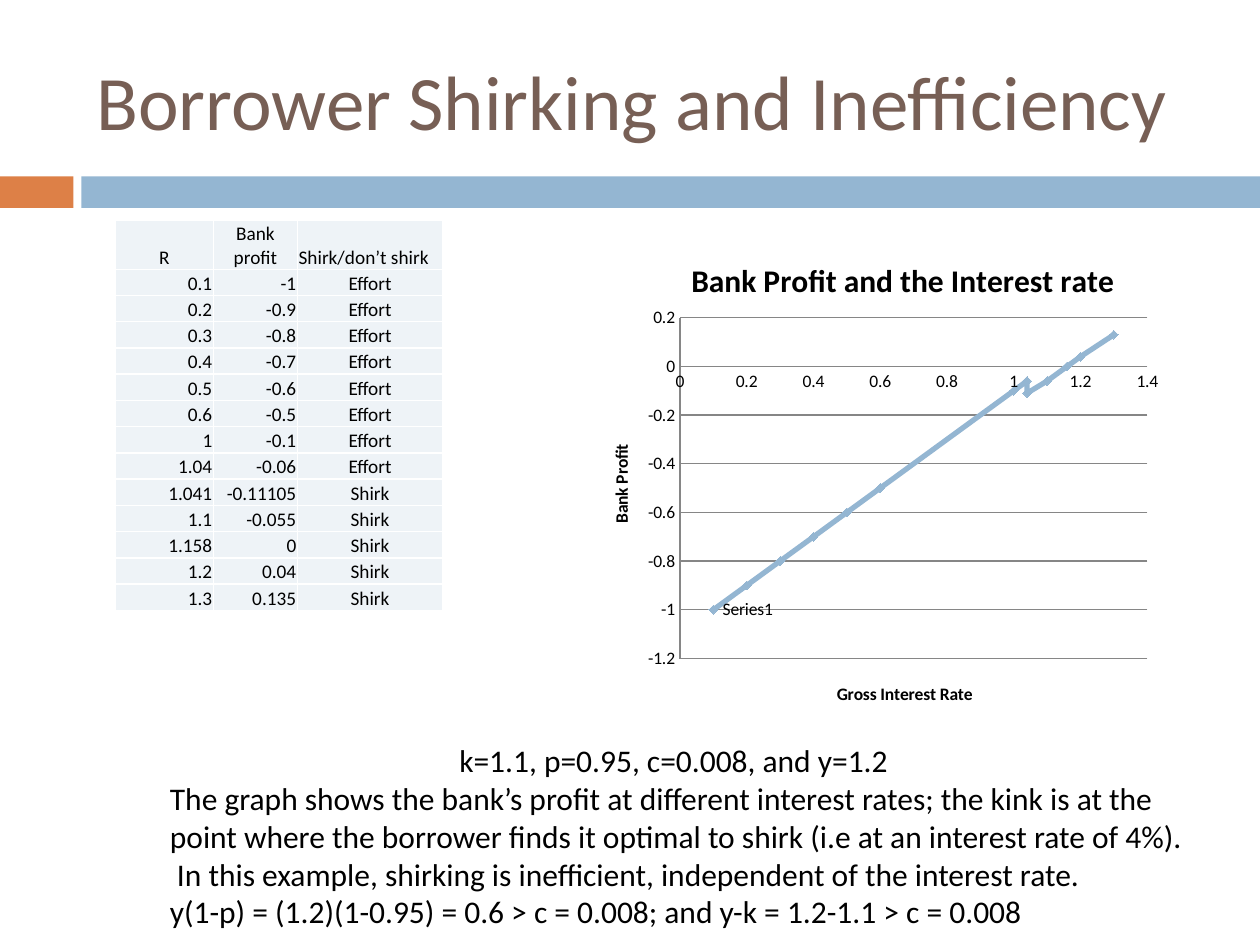
from lxml import etree
from pptx import Presentation
from pptx.chart.data import XyChartData
from pptx.dml.color import RGBColor
from pptx.enum import chart as ch, shapes, text
from pptx.oxml import parse_xml
from pptx.oxml.ns import nsdecls, qn
from pptx.util import Pt

BLACK = RGBColor(0x00, 0x00, 0x00)
WHITE = RGBColor(0xFF, 0xFF, 0xFF)
BROWN = RGBColor(0x77, 0x5F, 0x55)
ORANGE = RGBColor(0xDD, 0x80, 0x47)
BLUE = RGBColor(0x94, 0xB6, 0xD2)
PALE = RGBColor(0xEE, 0xF3, 0xF7)
GRAY = RGBColor(0x86, 0x86, 0x86)
LEFT, CENTER, RIGHT = (text.PP_ALIGN.LEFT, text.PP_ALIGN.CENTER,
                       text.PP_ALIGN.RIGHT)

HEADERS = ("R", "Bank profit", "Shirk/don’t shirk")
RATES = (0.1, 0.2, 0.3, 0.4, 0.5, 0.6, 1, 1.04, 1.041, 1.1, 1.158, 1.2, 1.3)
PROFITS = (-1, -0.9, -0.8, -0.7, -0.6, -0.5, -0.1, -0.06, -0.11105, -0.055,
           0, 0.04, 0.135)
PLOT_PROFITS = PROFITS[:8] + (-0.11, -0.06, 0, 0.04, 0.13)
SHIRK_RATE = 1.04
NOTES = (
    ("k=1.1, p=0.95, c=0.008, and y=1.2 ", CENTER),
    ("The graph shows the bank’s profit at different interest rates; the kink "
     "is at the point where the borrower finds it optimal to shirk (i.e at an "
     "interest rate of 4%).  In this example, shirking is inefficient, "
     "independent of the interest rate.", LEFT),
    ("y(1-p) = (1.2)(1-0.95) = 0.6 > c = 0.008; and y-k = 1.2-1.1 > c = 0.008",
     LEFT),
)


def set_attrs(obj, **values):
    for name, value in values.items():
        setattr(obj, name, value)


def set_font(font, size, color=BLACK, bold=False):
    set_attrs(font, name="Calibri", size=Pt(size), bold=bold)
    font.color.rgb = color


def place(sp, box):
    set_attrs(sp, **dict(zip(("left", "top", "width", "height"),
                             map(Pt, box))))


def write(p, value, size, align=LEFT, color=BLACK, bold=False):
    p.alignment = align
    r = p.add_run()
    r.text = value
    set_font(r.font, size, color, bold)


def add_title(s, box):
    sp = s.shapes.title
    place(sp, box)
    tf = sp.text_frame
    set_attrs(tf, vertical_anchor=text.MSO_ANCHOR.MIDDLE, word_wrap=True,
              auto_size=text.MSO_AUTO_SIZE.NONE)
    write(tf.paragraphs[0], "Borrower Shirking and Inefficiency", 44,
          color=BROWN)


def add_band(s, box):
    x, y, w, h = box
    tab, gap = 42, 4.5
    for left, width, color in ((x, tab, ORANGE),
                               (x + tab + gap, w - tab - gap, BLUE)):
        sp = s.shapes.add_shape(shapes.MSO_SHAPE.RECTANGLE,
                                *map(Pt, (left, y, width, h)))
        sp.shadow.inherit = False
        sp.fill.solid()
        sp.fill.fore_color.rgb = color
        sp.line.fill.background()


def border_cell(cell):
    tc_pr = cell._tc.get_or_add_tcPr()
    for i, side in enumerate(("lnL", "lnR", "lnT", "lnB")):
        tc_pr.insert(i, parse_xml(
            f'<a:{side} {nsdecls("a")} w="{Pt(1)}"><a:solidFill>'
            f'<a:srgbClr val="{WHITE}"/></a:solidFill></a:{side}>'))


def add_profit_table(s, box):
    rows = [HEADERS] + [
        (f"{rate:g}", f"{profit:g}",
         "Effort" if rate <= SHIRK_RATE else "Shirk")
        for rate, profit in zip(RATES, PROFITS)]
    head_h = 27.5
    row_h = (box[3] - head_h) / len(RATES)
    tbl = s.shapes.add_table(len(rows), len(HEADERS), *map(Pt, box)).table
    set_attrs(tbl, first_row=False, horz_banding=False)
    for col, width in zip(tbl.columns, (56, 48, 83)):
        col.width = Pt(width)
    for i, values in enumerate(rows):
        tbl.rows[i].height = Pt(row_h if i else head_h)
        aligns = (RIGHT, RIGHT, CENTER) if i else (CENTER, CENTER, LEFT)
        for j, (value, align) in enumerate(zip(values, aligns)):
            cell = tbl.cell(i, j)
            set_attrs(cell, margin_left=Pt(0.7), margin_right=Pt(0.7),
                      margin_top=Pt(0.7), margin_bottom=0,
                      vertical_anchor=text.MSO_ANCHOR.BOTTOM)
            cell.fill.solid()
            cell.fill.fore_color.rgb = PALE
            border_cell(cell)
            write(cell.text_frame.paragraphs[0], value, 11, align)


def set_layout(element, x, y, w=None, h=None):
    for old in element.findall(qn("c:layout")):
        element.remove(old)
    layout = etree.Element(qn("c:layout"))
    manual = etree.SubElement(layout, qn("c:manualLayout"))
    values = {"xMode": "edge", "yMode": "edge", "x": x, "y": y}
    if w:
        values = {"layoutTarget": "inner", **values, "w": w, "h": h}
    for tag, value in values.items():
        etree.SubElement(manual, qn(f"c:{tag}")).set("val", str(value))
    tx = element.find(qn("c:tx"))
    element.insert(0 if tx is None else 1, layout)


def add_profit_chart(s, box):
    data = XyChartData()
    points = data.add_series("Series1")
    for rate, profit in zip(RATES, PLOT_PROFITS):
        points.add_data_point(round(rate, 2), profit)
    chart = s.shapes.add_chart(ch.XL_CHART_TYPE.XY_SCATTER_LINES,
                               *map(Pt, box), data).chart
    chart.has_legend = False
    set_font(chart.font, 10)
    x_axis, y_axis = chart.category_axis, chart.value_axis
    for title, value, size, at in (
            (chart.chart_title, "Bank Profit and the Interest rate", 18,
             (0.155, 0.064)),
            (x_axis.axis_title, "Gross Interest Rate", 10, (0.39, 0.916)),
            (y_axis.axis_title, "Bank Profit", 10, (0.03, 0.44))):
        write(title.text_frame.paragraphs[0], value, size, CENTER, bold=True)
        set_layout(title.element, *at)
    for axis in (x_axis, y_axis):
        set_attrs(axis, major_tick_mark=ch.XL_TICK_MARK.NONE,
                  minor_tick_mark=ch.XL_TICK_MARK.NONE,
                  has_major_gridlines=axis is y_axis)
        axis.format.line.color.rgb = GRAY
    y_axis.major_gridlines.format.line.color.rgb = GRAY
    set_layout(chart.element.find(".//" + qn("c:plotArea")),
               0.146, 0.194, 0.742, 0.68)

    plot = chart.plots[0]
    plot.vary_by_categories = False
    ser = plot.series[0]
    ser.smooth = False
    ser.format.line.width = Pt(3)
    ser.format.line.color.rgb = BLUE
    set_attrs(ser.marker, style=ch.XL_MARKER_STYLE.DIAMOND, size=5)
    ser.marker.format.fill.solid()
    ser.marker.format.fill.fore_color.rgb = BLUE
    ser.marker.format.line.color.rgb = BLUE
    label = ser.points[0].data_label
    write(label.text_frame.paragraphs[0], "Series1", 10)
    label.position = ch.XL_LABEL_POSITION.RIGHT


def add_notes_text(s, box):
    tf = s.shapes.add_textbox(*map(Pt, box)).text_frame
    tf.word_wrap = True
    for i, (value, align) in enumerate(NOTES):
        p = tf.add_paragraph() if i else tf.paragraphs[0]
        write(p, value, 18, align)


def main():
    prs = Presentation()
    set_attrs(prs, slide_width=Pt(720), slide_height=Pt(540))
    s = prs.slides.add_slide(prs.slide_layouts[5])
    add_band(s, (0, 100.8, 720, 18))
    add_title(s, (48, 18, 642, 78))
    add_profit_table(s, (66, 126, 187, 222.5))
    add_profit_chart(s, (336, 126, 360, 286.5))
    add_notes_text(s, (90, 420, 594, 116.5))
    prs.save("out.pptx")


if __name__ == "__main__":
    main()
